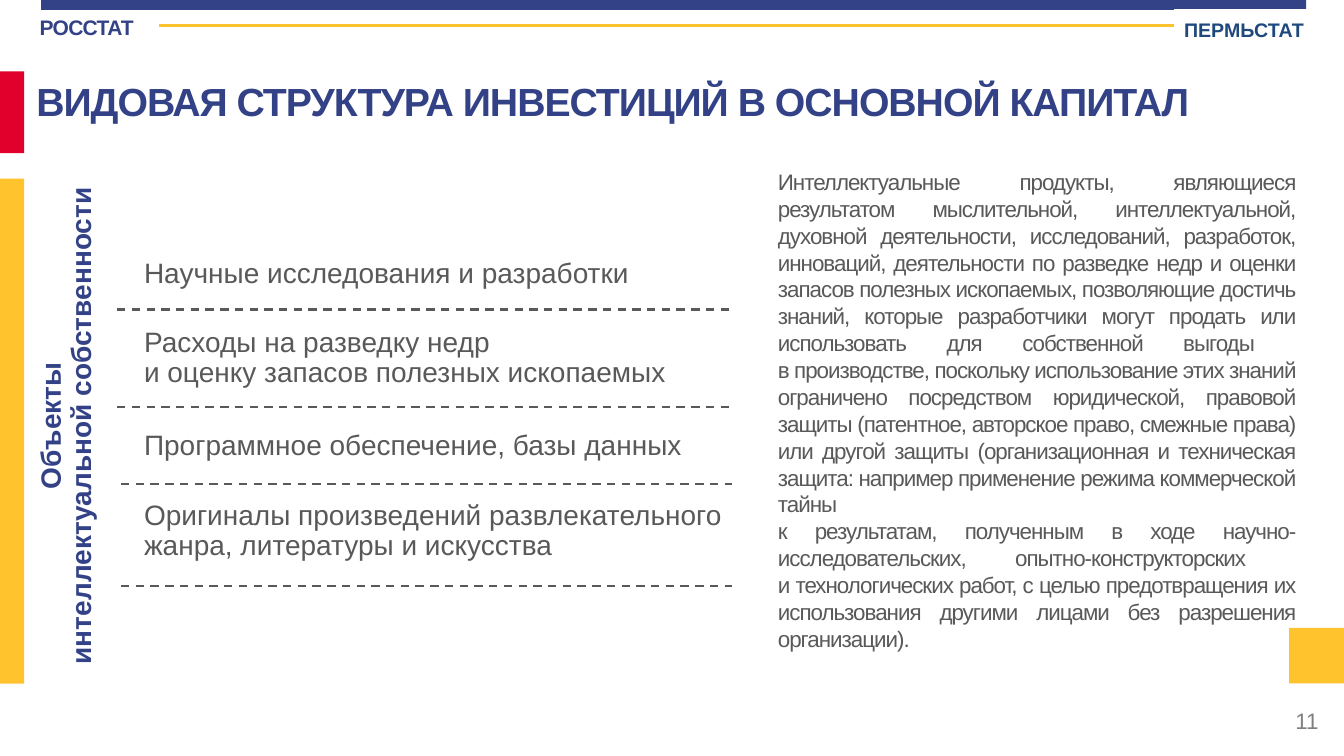
import pptx
import pptx.util
import pptx.dml.color
import pptx.enum.dml
import pptx.enum.shapes
import pptx.enum.text
import pptx.oxml

Cm = pptx.util.Cm
Pt = pptx.util.Pt
RGBColor = pptx.dml.color.RGBColor
Align = pptx.enum.text.PP_ALIGN
Anchor = pptx.enum.text.MSO_ANCHOR

NAVY = RGBColor(0x33, 0x42, 0x86)
STEEL = RGBColor(0x1F, 0x49, 0x7D)
RED = RGBColor(0xE1, 0x00, 0x2B)
GOLD = RGBColor(0xFF, 0xC3, 0x2E)
WHITE = RGBColor(0xFF, 0xFF, 0xFF)
DARK = RGBColor(0x59, 0x59, 0x59)
GREY = RGBColor(0x80, 0x80, 0x80)
NS = 'xmlns:a="http://schemas.openxmlformats.org/drawingml/2006/main"'


def write(shape, paras, size, color, bold=False, align=Align.LEFT,
          pitch=1.0, track=0, anchor=Anchor.TOP):
    """Fill a shape with paragraphs; a newline inside one is a line break."""
    frame = shape.text_frame
    frame.word_wrap = True
    frame.auto_size = pptx.enum.text.MSO_AUTO_SIZE.NONE
    frame.vertical_anchor = anchor
    for i, text in enumerate(paras):
        para = frame.add_paragraph() if i else frame.paragraphs[0]
        para.alignment = align
        para.line_spacing = pitch
        para.space_before = Pt(0)
        for j, line in enumerate(text.split("\n")):
            if j:
                para.add_line_break()
            run = para.add_run()
            run.text = line
            run.font.name = "Arial"
            run.font.size = Pt(size)
            run.font.bold = bold
            run.font.color.rgb = color
            if track:
                run.font._element.set("spc", str(track))


def rule(left, top, right, color, width):
    line = slide.shapes.add_connector(
        pptx.enum.shapes.MSO_CONNECTOR.STRAIGHT,
        Cm(left), Cm(top), Cm(right), Cm(top))
    line.line.color.rgb = color
    line.line.width = Pt(width)
    line._element.spPr.append(pptx.oxml.parse_xml(f"<a:effectLst {NS}/>"))
    return line


deck = pptx.Presentation()
deck.slide_width = Cm(33.87)
deck.slide_height = Cm(19.05)
slide = deck.slides.add_slide(deck.slide_layouts[1])

# Title and explanation
title, body = slide.placeholders
title.left, title.top, title.width, title.height = Cm(0.66), Cm(1.96), Cm(32.5), Cm(1.4)
write(title, ["ВИДОВАЯ СТРУКТУРА ИНВЕСТИЦИЙ В ОСНОВНОЙ КАПИТАЛ"],
      28, NAVY, True, pitch=0.9, track=-70)

body.left, body.top, body.width, body.height = Cm(19.35), Cm(4.11), Cm(13.56), Cm(12.57)
props = body.text_frame.paragraphs[0]._p.get_or_add_pPr()
props.set("marL", "0")
props.set("indent", "0")
props.append(pptx.oxml.parse_xml(f"<a:buNone {NS}/>"))
write(body, [
    "Интеллектуальные продукты, являющиеся результатом мыслительной, "
    "интеллектуальной, духовной деятельности, исследований, разработок, "
    "инноваций, деятельности по разведке недр и оценки запасов полезных "
    "ископаемых, позволяющие достичь знаний, которые разработчики могут "
    "продать или использовать для собственной выгоды \n"
    "в производстве, поскольку использование этих знаний ограничено "
    "посредством юридической, правовой защиты (патентное, авторское право, "
    "смежные права) или другой защиты (организационная и техническая защита: "
    "например применение режима коммерческой тайны \n"
    "к результатам, полученным в ходе научно-исследовательских, "
    "опытно-конструкторских \n"
    "и технологических работ, с целью предотвращения их использования "
    "другими лицами без разрешения организации)."],
    16, DARK, align=Align.JUSTIFY, track=-70)

# Header line and colour blocks
rule(4, 0.64, 32.9, GOLD, 2)
blocks = [
    (1.04, 0, 31.88, 0.25, NAVY),
    (0, 1.8, 0.61, 2.06, RED),
    (0, 4.5, 0.61, 12.73, GOLD),
    (32.49, 15.82, 1.38, 1.4, GOLD),
    (29.59, 0.23, 3.89, 0.86, WHITE),
]
for left, top, width, height, color in blocks:
    block = slide.shapes.add_shape(
        pptx.enum.shapes.MSO_SHAPE.RECTANGLE,
        Cm(left), Cm(top), Cm(width), Cm(height))
    block.shadow.inherit = False
    block.fill.solid()
    block.fill.fore_color.rgb = color
    block.line.fill.background()
    if color == WHITE:
        write(block, ["ПЕРМЬСТАТ"], 14, STEEL, True, pitch=1.15)

agency = slide.shapes.add_textbox(Cm(1), Cm(0.37), Cm(2.92), Cm(0.8))
write(agency, ["РОССТАТ"], 15, NAVY, True, track=-50)
frame = agency.text_frame
frame.margin_left = frame.margin_right = frame.margin_top = frame.margin_bottom = 0

# Kinds of intellectual property
label = slide.shapes.add_textbox(Cm(-4.7), Cm(9.83), Cm(12.8), Cm(1.8))
label.rotation = 270
write(label, ["Объекты", "интеллектуальной собственности"],
      20, NAVY, True, Align.CENTER, 0.9)
label.text_frame.word_wrap = False

kinds = [
    (6.32, 7.8, ["Научные исследования и разработки"]),
    (8.15, 10.26, ["Расходы на разведку недр",
                   "и оценку запасов полезных ископаемых"]),
    (10.64, 12.19, ["Программное обеспечение, базы данных"]),
    (12.5, 14.76, ["Оригиналы произведений развлекательного "
                   "жанра, литературы и искусства"]),
]
for i, (top, base, paras) in enumerate(kinds):
    tall = base - top > 2
    item = slide.shapes.add_textbox(
        Cm(3.38), Cm(top), Cm(15.6), Cm(1.8 if tall else 1.12))
    write(item, paras, 20, DARK, pitch=0.9 if tall else 1.0)
    dash = rule(2.95 if i < 2 else 3.05, base, 18.44, DARK, 1.5)
    dash.line.dash_style = pptx.enum.dml.MSO_LINE.DASH

number = slide.shapes.add_textbox(Cm(25.86), Cm(17.65), Cm(7.62), Cm(1.02))
write(number, ["11"], 16, GREY, align=Align.RIGHT, anchor=Anchor.MIDDLE)

deck.save("out.pptx")
